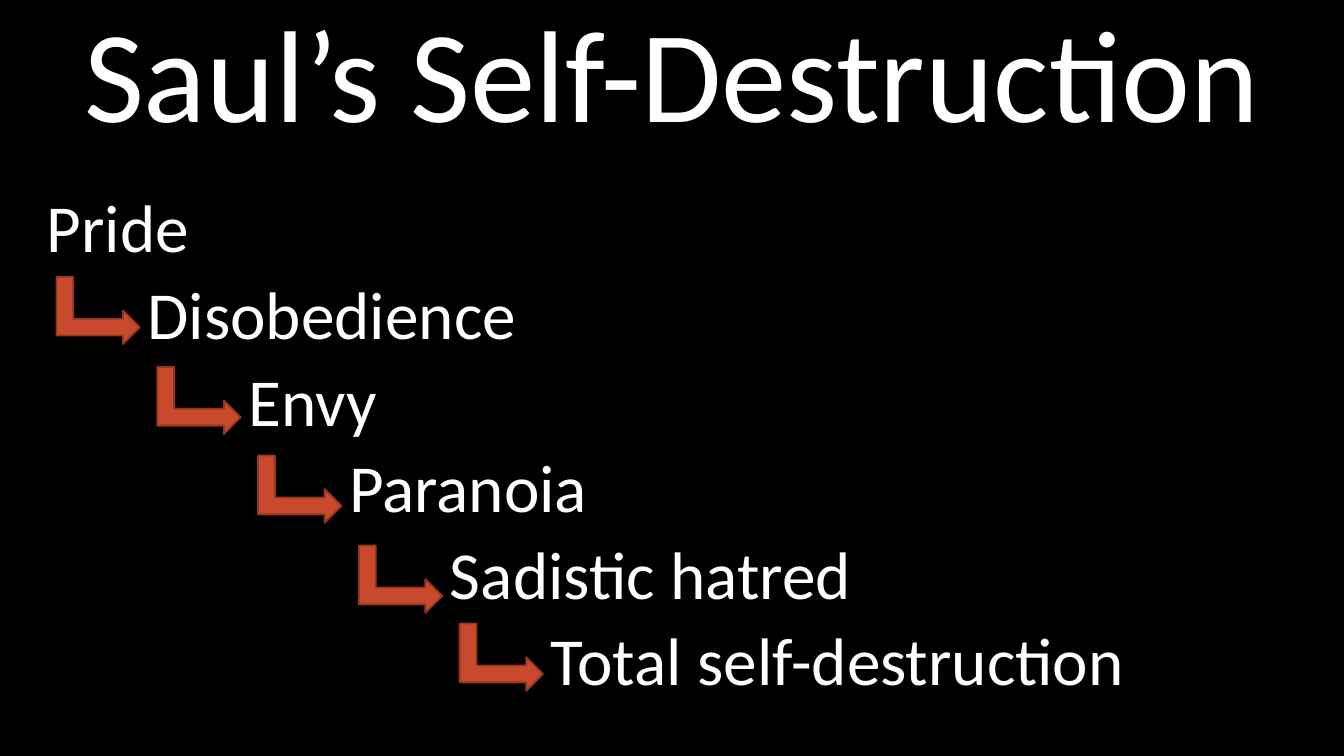
from dataclasses import dataclass

from pptx import Presentation
from pptx.dml.color import RGBColor
from pptx.enum.shapes import MSO_SHAPE
from pptx.enum.text import MSO_ANCHOR, MSO_AUTO_SIZE, PP_ALIGN
from pptx.util import Inches, Pt

BENT_ARROW = MSO_SHAPE.BENT_UP_ARROW
MIDDLE = MSO_ANCHOR.MIDDLE
TOP = MSO_ANCHOR.TOP
NO_AUTOFIT = MSO_AUTO_SIZE.NONE
CENTER = PP_ALIGN.CENTER
LEFT = PP_ALIGN.LEFT


@dataclass(frozen=True)
class Theme:
    font: str = "Calibri"
    background: RGBColor = RGBColor(0x00, 0x00, 0x00)
    text: RGBColor = RGBColor(0xFF, 0xFF, 0xFF)
    arrow: RGBColor = RGBColor(0xC9, 0x49, 0x2C)
    arrow_line: RGBColor = RGBColor(0x95, 0x36, 0x21)
    title_size: int = 70
    step_size: int = 36
    line_spacing: float = 0.9
    step_gap: float = 7.5


THEME = Theme()
SLIDE_WIDTH = 10
SLIDE_HEIGHT = SLIDE_WIDTH * 9 / 16
COLUMN = 0.75
STEPS_TOP = 1.4
ARROW_LEFT, ARROW_WIDTH, ARROW_HEIGHT = 0.48, 0.5, 0.62
ARROW_TOPS = [2, 2.67, 3.33, 4, 4.58]
TITLE = "Saul’s Self-Destruction"
STEPS = [
    "Pride",
    "Disobedience",
    "Envy",
    "Paranoia",
    "Sadistic hatred",
    "Total self-destruction",
]


def place(shape, left, top, width, height):
    shape.left, shape.top = Inches(left), Inches(top)
    shape.width, shape.height = Inches(width), Inches(height)


def format_frame(frame, anchor):
    frame.word_wrap = True
    frame.auto_size = NO_AUTOFIT
    frame.vertical_anchor = anchor


def format_paragraph(paragraph, size, alignment):
    paragraph.alignment = alignment
    paragraph.line_spacing = THEME.line_spacing
    paragraph.font.name = THEME.font
    paragraph.font.size = Pt(size)
    paragraph.font.color.rgb = THEME.text


def set_title(slide):
    title = slide.shapes.title
    place(title, 0, 0, SLIDE_WIDTH, 1.19)
    title.text_frame.text = TITLE
    format_frame(title.text_frame, MIDDLE)
    format_paragraph(title.text_frame.paragraphs[0], THEME.title_size, CENTER)


def add_steps(slide):
    box = slide.shapes.add_textbox(
        Inches(0.25),
        Inches(STEPS_TOP),
        Inches(9.67),
        Inches(SLIDE_HEIGHT - STEPS_TOP),
    )
    frame = box.text_frame
    frame.text = "\n".join(STEPS)
    format_frame(frame, TOP)
    for level, paragraph in enumerate(frame.paragraphs):
        format_paragraph(paragraph, THEME.step_size, LEFT)
        paragraph.space_before = Pt(THEME.step_gap)
        properties = paragraph._p.get_or_add_pPr()
        properties.set("marL", str(Inches(level * COLUMN)))
        properties.set("indent", "0")


def add_arrow(slide, column, top):
    arrow = slide.shapes.add_shape(
        BENT_ARROW,
        Inches(ARROW_LEFT + column * COLUMN),
        Inches(top),
        Inches(ARROW_WIDTH),
        Inches(ARROW_HEIGHT),
    )
    arrow.rotation = 90
    arrow.shadow.inherit = False
    arrow.fill.solid()
    arrow.fill.fore_color.rgb = THEME.arrow
    arrow.line.color.rgb = THEME.arrow_line
    arrow.line.width = Pt(1)


def main():
    presentation = Presentation()
    presentation.slide_width = Inches(SLIDE_WIDTH)
    presentation.slide_height = Inches(SLIDE_HEIGHT)
    slide = presentation.slides.add_slide(
        presentation.slide_layouts.get_by_name("Title Only")
    )
    slide.background.fill.solid()
    slide.background.fill.fore_color.rgb = THEME.background
    set_title(slide)
    add_steps(slide)
    for column, top in enumerate(ARROW_TOPS):
        add_arrow(slide, column, top)
    presentation.save("out.pptx")


if __name__ == "__main__":
    main()
